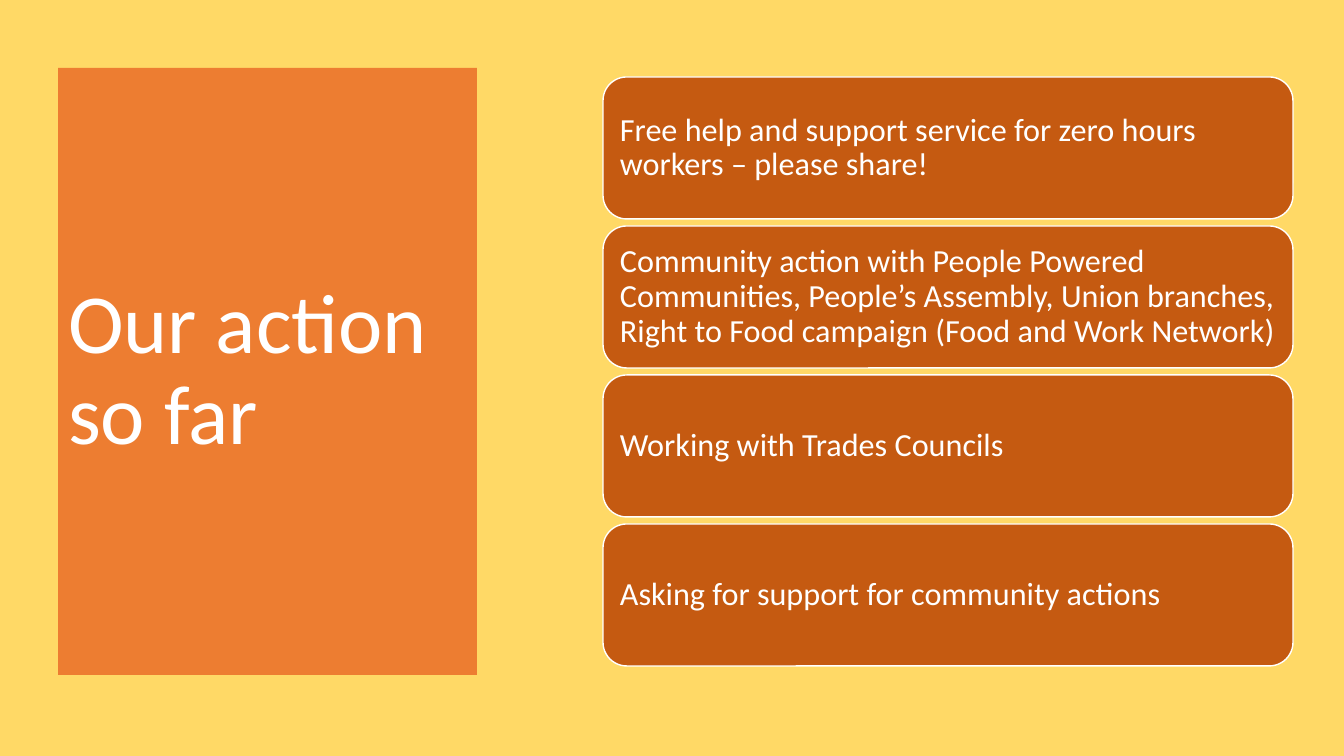
"""Build the "Our action so far" slide: a title panel beside a column of action cards."""
from dataclasses import dataclass

from pptx import Presentation
from pptx.dml.color import RGBColor
from pptx.enum.shapes import MSO_SHAPE as Shape
from pptx.enum.text import MSO_ANCHOR as Anchor, MSO_AUTO_SIZE as AutoSize, PP_ALIGN as Align
from pptx.util import Pt

TITLE = "Our action so far"
ACTIONS = [
    "Free help and support service for zero hours workers – please share!",
    "Community action with People Powered Communities, People’s Assembly, "
    "Union branches, Right to Food campaign (Food and Work Network)",
    "Working with Trades Councils",
    "Asking for support for community actions",
]

SLIDE_SIZE = (1344, 756)
TITLE_PANEL = (58, 68, 419, 607)
FIRST_CARD = (603, 77, 690, 142)
CARD_GAP = 7
INSET_X, TITLE_INSET_Y, CARD_INSET_Y = 10, 5, 10
EMU_PER_PX = 12192000 / SLIDE_SIZE[0]


@dataclass(frozen=True)
class Theme:
    background: str = "FFD966"
    panel: str = "ED7D31"
    card: str = "C55A11"
    light: str = "FFFFFF"
    font: str = "Calibri"
    title_size: int = 60
    card_size: int = 23
    outline: int = 1
    line_spacing: float = 0.9


THEME = Theme()


def px(length):
    return round(length * EMU_PER_PX)


def paint(fill, color):
    fill.solid()
    fill.fore_color.rgb = RGBColor.from_string(color)


def write(shape, text, size, inset_y):
    frame = shape.text_frame
    frame.text = text
    frame.word_wrap = True
    frame.auto_size = AutoSize.NONE
    frame.vertical_anchor = Anchor.MIDDLE
    frame.margin_left = frame.margin_right = px(INSET_X)
    frame.margin_top = frame.margin_bottom = px(inset_y)
    para = frame.paragraphs[0]
    para.alignment = Align.LEFT
    para.line_spacing = THEME.line_spacing
    font = para.runs[0].font
    font.name = THEME.font
    font.size = Pt(size)
    font.color.rgb = RGBColor.from_string(THEME.light)


def add_title(page):
    title = page.shapes.title
    title.left, title.top, title.width, title.height = map(px, TITLE_PANEL)
    paint(title.fill, THEME.panel)
    write(title, TITLE, THEME.title_size, TITLE_INSET_Y)


def add_card(page, index, action):
    left, top, width, height = FIRST_CARD
    top += index * (height + CARD_GAP)
    card = page.shapes.add_shape(Shape.ROUNDED_RECTANGLE, *map(px, (left, top, width, height)))
    card.shadow.inherit = False
    paint(card.fill, THEME.card)
    paint(card.line.fill, THEME.light)
    card.line.width = Pt(THEME.outline)
    write(card, action, THEME.card_size, CARD_INSET_Y)


def main():
    deck = Presentation()
    deck.slide_width, deck.slide_height = map(px, SLIDE_SIZE)
    page = deck.slides.add_slide(deck.slide_layouts[5])
    paint(page.background.fill, THEME.background)
    add_title(page)
    for index, action in enumerate(ACTIONS):
        add_card(page, index, action)
    deck.save("out.pptx")


if __name__ == "__main__":
    main()
